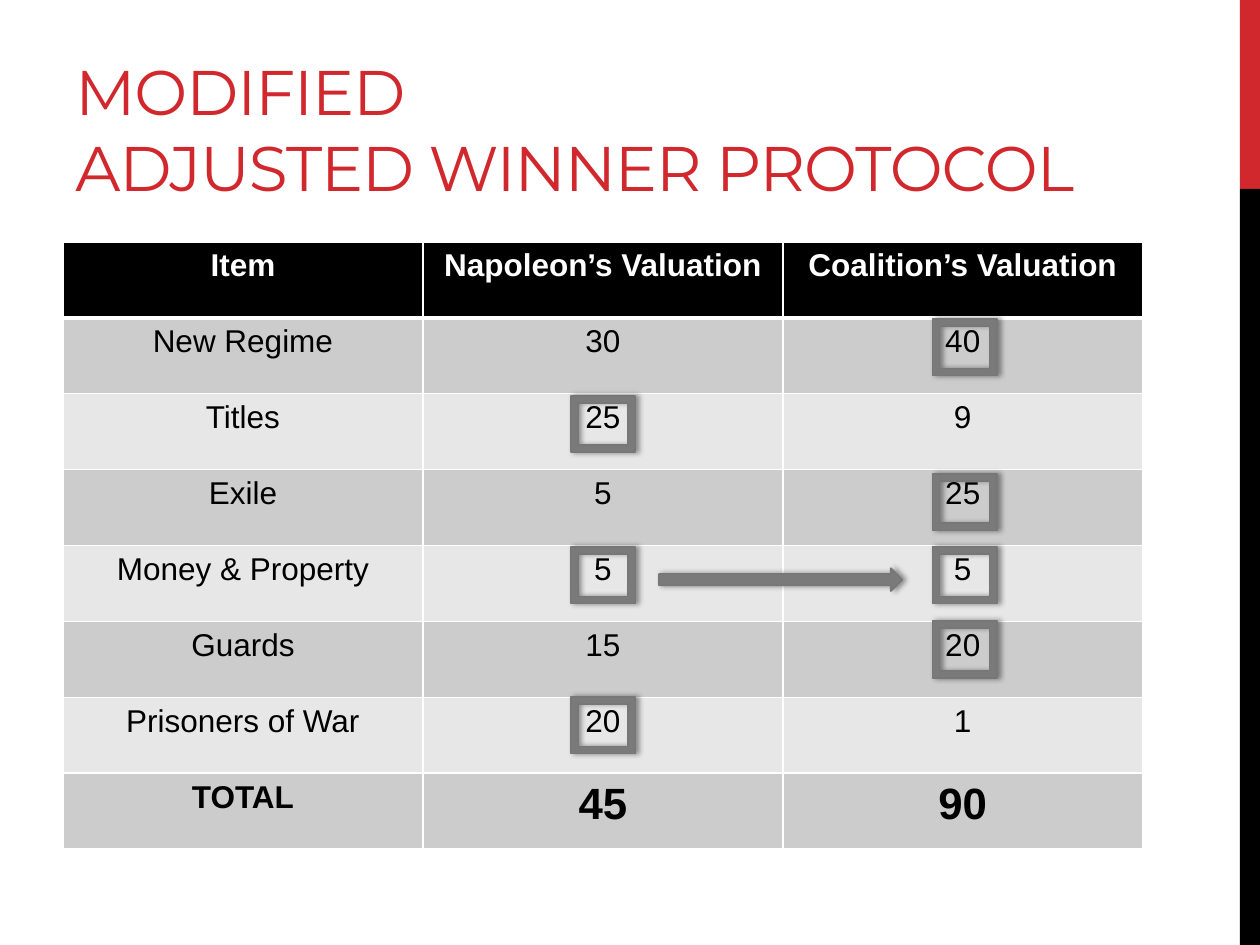
from dataclasses import dataclass

from lxml.etree import SubElement
from pptx import Presentation
from pptx.dml.color import RGBColor
from pptx.enum.shapes import MSO_SHAPE
from pptx.enum.text import MSO_ANCHOR, PP_ALIGN
from pptx.oxml.ns import qn
from pptx.util import Inches, Pt


@dataclass(frozen=True)
class Theme:
    red: str = "D1282E"
    black: str = "000000"
    white: str = "FFFFFF"
    dark_band: str = "CCCCCC"
    light_band: str = "E7E7E7"
    marker: str = "7A7A7A"
    marker_line: str = "777777"
    title_font: str = "Montserrat"
    body_font: str = "Arial"
    title_size: int = 36
    body_size: int = 18
    total_size: int = 25


def write_text(frame, text, *, font, size, color, bold=False,
               align=PP_ALIGN.LEFT, spacing=None):
    para = frame.paragraphs[0]
    para.text = text
    para.alignment = align
    for span in para.runs:
        span.font.name = font
        span.font.size = Pt(size)
        span.font.bold = bold
        span.font.color.rgb = RGBColor.from_string(color)
        if spacing is not None:
            span.font._element.set("spc", str(round(spacing * 100)))


class SlideBuilder:
    def __init__(self, page, theme):
        self.page = page
        self.theme = theme

    def shape(self, kind, left, top, width, height, color, line=None):
        box = self.page.shapes.add_shape(
            kind, Inches(left), Inches(top), Inches(width), Inches(height))
        box.shadow.inherit = False
        box.fill.solid()
        box.fill.fore_color.rgb = RGBColor.from_string(color)
        if line:
            box.line.color.rgb = RGBColor.from_string(line)
            box.line.width = Pt(1)
        else:
            box.line.fill.background()
        return box

    def marker(self, kind, left, top, width, height):
        box = self.shape(kind, left, top, width, height,
                         self.theme.marker, self.theme.marker_line)
        effects = box._element.spPr.find(qn("a:effectLst"))
        shadow = SubElement(effects, qn("a:outerShdw"), blurRad=str(Pt(3.1)),
                            dist=str(Pt(1.8)), dir="0", rotWithShape="0")
        color = SubElement(shadow, qn("a:srgbClr"), val=self.theme.black)
        SubElement(color, qn("a:alpha"), val="40000")
        return box

    def title(self, text, left, top, width, height):
        box = self.page.shapes.add_textbox(
            Inches(left), Inches(top), Inches(width), Inches(height))
        box.text_frame.word_wrap = True
        box.text_frame.vertical_anchor = MSO_ANCHOR.BOTTOM
        write_text(box.text_frame, text, font=self.theme.title_font,
                   size=self.theme.title_size, color=self.theme.red, spacing=-0.6)

    def borders(self, cell, bottom):
        properties = cell._tc.get_or_add_tcPr()
        for side, width in (("L", 1), ("R", 1), ("T", 1), ("B", bottom)):
            line = SubElement(properties, qn(f"a:ln{side}"), w=str(Pt(width)))
            fill = SubElement(line, qn("a:solidFill"))
            SubElement(fill, qn("a:srgbClr"), val=self.theme.white)

    def table(self, rows, left, top, width, height):
        theme = self.theme
        table = self.page.shapes.add_table(
            len(rows), len(rows[0]), Inches(left), Inches(top),
            Inches(width), Inches(height)).table
        for row, values in enumerate(rows):
            header, total = row == 0, row == len(rows) - 1
            band = theme.dark_band if row % 2 else theme.light_band
            for column, value in enumerate(values):
                cell = table.cell(row, column)
                self.borders(cell, bottom=3 if header else 1)
                cell.fill.solid()
                cell.fill.fore_color.rgb = RGBColor.from_string(
                    theme.black if header else band)
                write_text(
                    cell.text_frame, value, font=theme.body_font,
                    size=theme.total_size if total and column else theme.body_size,
                    color=theme.white if header else theme.black,
                    bold=header or total, align=PP_ALIGN.CENTER)


VALUATIONS = [
    ("Item", "Napoleon’s Valuation", "Coalition’s Valuation"),
    ("New Regime", "30", "40"),
    ("Titles", "25", "9"),
    ("Exile", "5", "25"),
    ("Money & Property", "5", "5"),
    ("Guards", "15", "20"),
    ("Prisoners of War", "20", "1"),
    ("TOTAL", "45", "90"),
]
NAPOLEON_LEFT, COALITION_LEFT = 4.53, 7.4
AWARD_TOPS = {
    NAPOLEON_LEFT: (3.14, 4.34, 5.53),
    COALITION_LEFT: (2.53, 3.76, 4.34, 4.93),
}


def main():
    deck = Presentation()
    deck.slide_width, deck.slide_height = Inches(10), Inches(7.5)
    theme = Theme()
    builder = SlideBuilder(deck.slides.add_slide(deck.slide_layouts[6]), theme)

    builder.shape(MSO_SHAPE.RECTANGLE, 9.84, 0, 0.16, 1.5, theme.red)
    builder.shape(MSO_SHAPE.RECTANGLE, 9.84, 1.5, 0.16, 6, theme.black)
    builder.title("MODIFIED\vADJUSTED WINNER PROTOCOL", 0.5, 0.17, 9.01, 1.5)
    builder.table(VALUATIONS, 0.5, 1.92, 8.57, 4.82)
    for left, tops in AWARD_TOPS.items():
        for top in tops:
            builder.marker(MSO_SHAPE.FRAME, left, top, 0.51, 0.45)
    transfer = builder.marker(MSO_SHAPE.LEFT_ARROW, 5.23, 4.51, 1.93, 0.18)
    transfer.rotation = 180

    deck.save("out.pptx")


if __name__ == "__main__":
    main()
